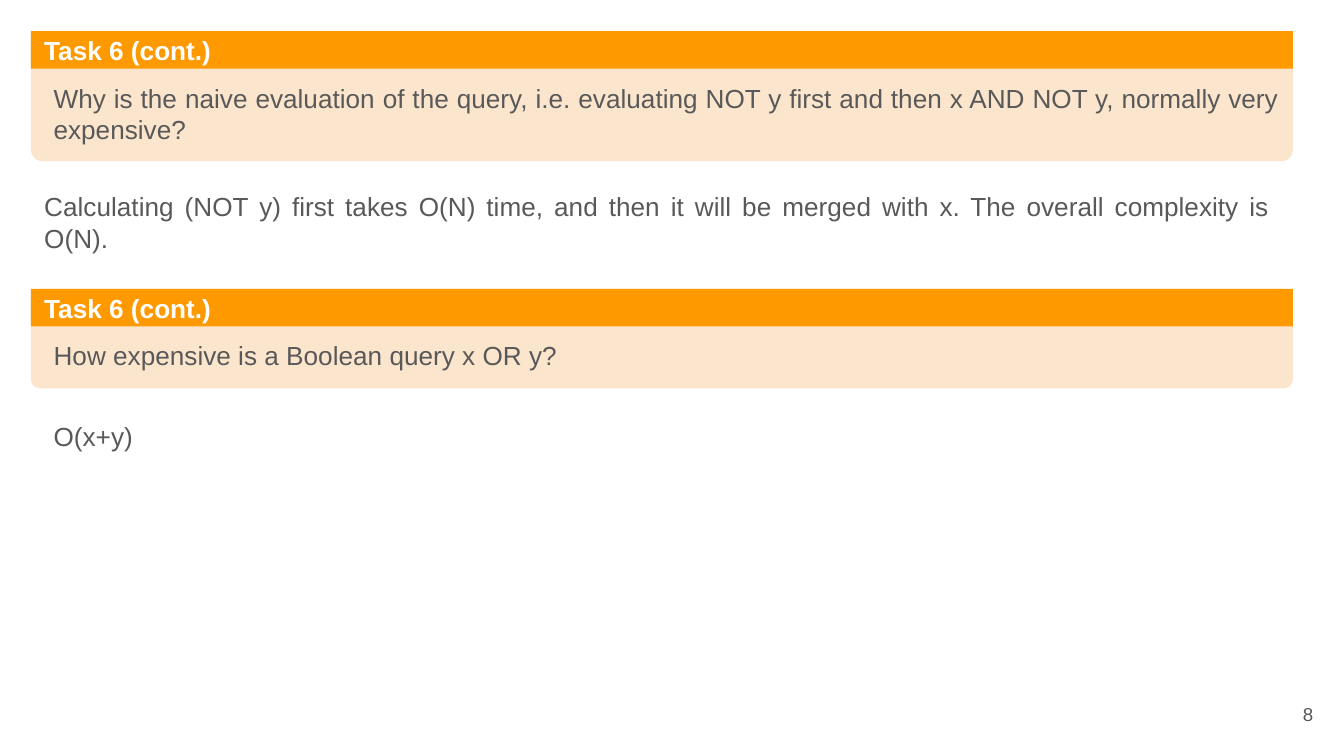
from dataclasses import dataclass

from pptx import Presentation
from pptx.dml.color import RGBColor
from pptx.enum.shapes import MSO_SHAPE
from pptx.enum.text import MSO_ANCHOR, PP_ALIGN
from pptx.slide import Slide
from pptx.text.text import TextFrame
from pptx.util import Pt


@dataclass(frozen=True)
class Theme:
    font: str = "Arial"
    accent: str = "FF9900"
    panel: str = "FCE5CD"
    heading: str = "FFFFFF"
    body: str = "595959"
    text_size: float = 14
    number_size: float = 10


@dataclass(frozen=True)
class Box:
    left: float
    top: float
    width: float
    height: float

    def lengths(self) -> tuple[Pt, ...]:
        return Pt(self.left), Pt(self.top), Pt(self.width), Pt(self.height)


@dataclass(frozen=True)
class Task:
    top: float
    height: float
    question: str
    answer: str
    answer_left: float
    answer_top: float


THEME = Theme()
INSET = 7.2
CARD_LEFT, CARD_WIDTH, HEADER_HEIGHT = 16.6, 676, 20.1
TEXT_LEFT, TEXT_WIDTH, TEXT_HEIGHT = 21.6, 671, 31
CORNER = 0.087
TASKS = (
    Task(
        16.6, 69.8,
        "Why is the naive evaluation of the query, i.e. evaluating NOT y first "
        "and then x AND NOT y, normally very expensive?",
        "Calculating (NOT y) first takes O(N) time, and then it will be merged "
        "with x. The overall complexity is O(N).",
        CARD_LEFT, 95,
    ),
    Task(154.8, 53.3, "How expensive is a Boolean query x OR y?", "O(x+y)", TEXT_LEFT, 218.2),
)


def write_text(frame: TextFrame, text: str, color: str, size: float,
               alignment: PP_ALIGN, anchor: MSO_ANCHOR, bold: bool = False) -> None:
    frame_format = {"word_wrap": True, "vertical_anchor": anchor}
    frame_format |= {f"margin_{side}": Pt(INSET) for side in ("left", "top", "right", "bottom")}
    for name, value in frame_format.items():
        setattr(frame, name, value)
    paragraph = frame.paragraphs[0]
    paragraph.alignment = alignment
    run = paragraph.add_run()
    run.text = text
    for name, value in {"name": THEME.font, "size": Pt(size), "bold": bold}.items():
        setattr(run.font, name, value)
    run.font.color.rgb = RGBColor.from_string(color)


def add_panel(slide: Slide, box: Box, color: str, corner: float) -> TextFrame:
    shape = slide.shapes.add_shape(MSO_SHAPE.ROUNDED_RECTANGLE, *box.lengths())
    shape.adjustments[0] = corner
    shape.shadow.inherit = False
    shape.fill.solid()
    shape.fill.fore_color.rgb = RGBColor.from_string(color)
    shape.line.fill.background()
    return shape.text_frame


def add_body(slide: Slide, left: float, top: float, text: str) -> None:
    box = Box(left, top, TEXT_WIDTH, TEXT_HEIGHT)
    frame = slide.shapes.add_textbox(*box.lengths()).text_frame
    write_text(frame, text, THEME.body, THEME.text_size, PP_ALIGN.JUSTIFY, MSO_ANCHOR.TOP)


def add_task(slide: Slide, task: Task) -> None:
    add_panel(slide, Box(CARD_LEFT, task.top, CARD_WIDTH, task.height), THEME.panel, CORNER)
    header = add_panel(slide, Box(CARD_LEFT, task.top, CARD_WIDTH, HEADER_HEIGHT), THEME.accent, 0)
    write_text(header, "Task 6 (cont.)", THEME.heading, THEME.text_size,
               PP_ALIGN.LEFT, MSO_ANCHOR.MIDDLE, bold=True)
    add_body(slide, TEXT_LEFT, task.top + HEADER_HEIGHT, task.question)
    add_body(slide, task.answer_left, task.answer_top, task.answer)


def add_page_number(slide: Slide, number: int) -> None:
    frame = slide.shapes.add_textbox(*Box(667.4, 367.2, 43.2, 31).lengths()).text_frame
    write_text(frame, str(number), THEME.body, THEME.number_size,
               PP_ALIGN.RIGHT, MSO_ANCHOR.MIDDLE)


def main() -> None:
    presentation = Presentation()
    presentation.slide_width, presentation.slide_height = Pt(720), Pt(405)
    slide = presentation.slides.add_slide(presentation.slide_layouts[6])
    for task in TASKS:
        add_task(slide, task)
    add_page_number(slide, 8)
    presentation.save("out.pptx")


if __name__ == "__main__":
    main()
